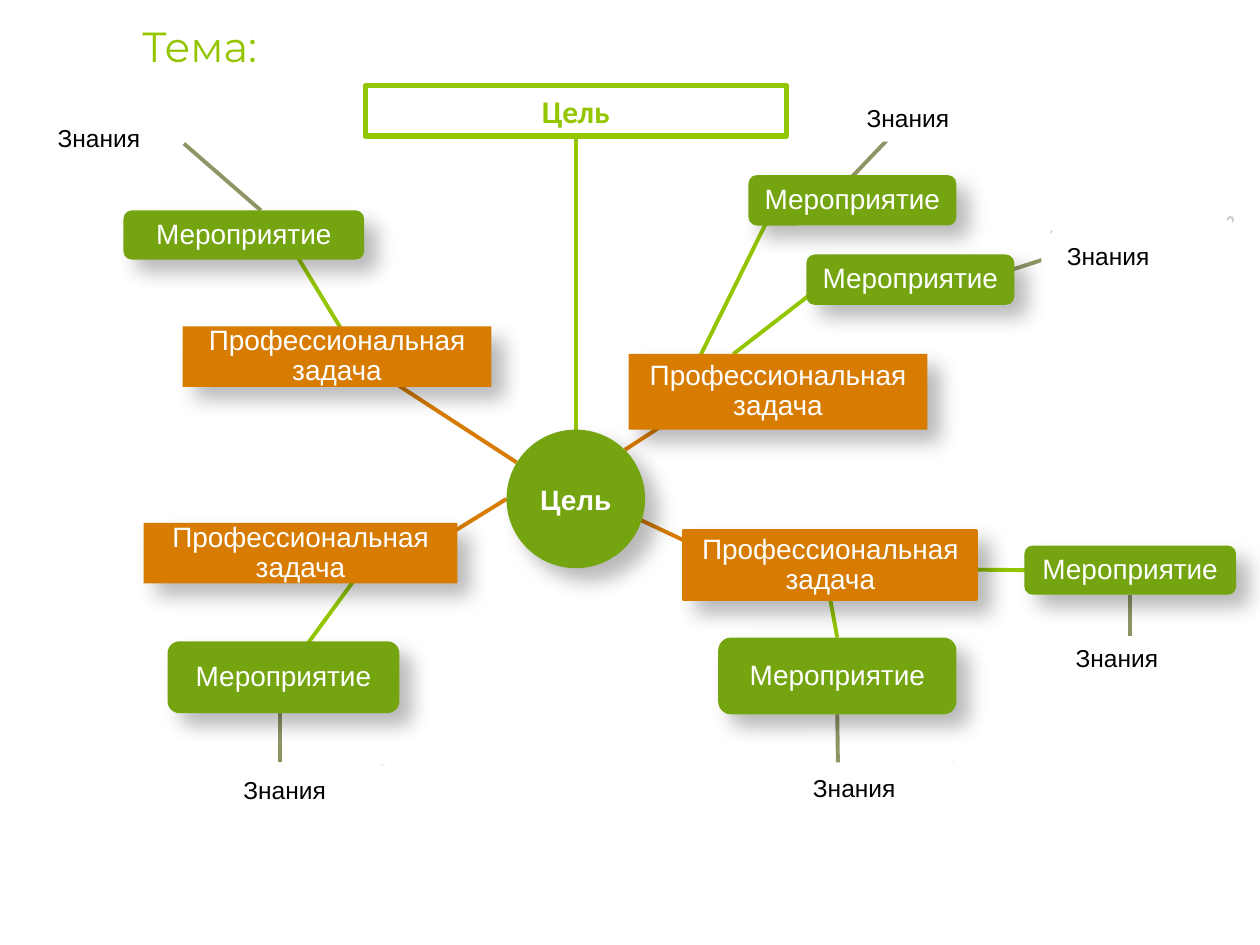
"""Build a goal map: a central goal, professional tasks, activities and knowledge."""
from lxml import etree
from pptx import Presentation
from pptx.dml.color import RGBColor
from pptx.enum.shapes import MSO_CONNECTOR, MSO_SHAPE
from pptx.enum.text import MSO_ANCHOR, MSO_AUTO_SIZE, PP_ALIGN
from pptx.oxml import parse_xml
from pptx.oxml.ns import nsdecls, qn
from pptx.util import Inches, Pt

RECT, ROUNDED = MSO_SHAPE.RECTANGLE, MSO_SHAPE.ROUNDED_RECTANGLE
OVAL, SCROLL = MSO_SHAPE.OVAL, MSO_SHAPE.HORIZONTAL_SCROLL
STRAIGHT = MSO_CONNECTOR.STRAIGHT
LEFT, CENTER = PP_ALIGN.LEFT, PP_ALIGN.CENTER
TOP, MIDDLE = MSO_ANCHOR.TOP, MSO_ANCHOR.MIDDLE
GROW = MSO_AUTO_SIZE.SHAPE_TO_FIT_TEXT
TOP_SITE, BOTTOM_SITE = 0, 2

WHITE = RGBColor(0xFF, 0xFF, 0xFF)
BLACK = RGBColor(0x00, 0x00, 0x00)
LIME = RGBColor(0x93, 0xC6, 0x00)
HEADING_LIME = RGBColor(0x94, 0xC6, 0x00)
GREEN = RGBColor(0x74, 0xA5, 0x10)
ORANGE = RGBColor(0xD7, 0x7C, 0x01)
OLIVE = RGBColor(0x90, 0x94, 0x65)

SHADOW = (
    f'<a:effectLst {nsdecls("a")}><a:outerShdw blurRad="{Pt(11.8)}" dist="{Pt(10)}" '
    'dir="2700000" algn="tl" rotWithShape="0"><a:srgbClr val="000000">'
    '<a:alpha val="28000"/></a:srgbClr></a:outerShdw></a:effectLst>'
)

TASKS = {
    "upper left": (1.45, 2.59, 2.45, 0.48),
    "lower left": (1.14, 4.15, 2.49, 0.48),
    "upper right": (4.99, 2.81, 2.37, 0.6),
}
LOWER_RIGHT_TASK = (5.43, 4.21, 2.32, 0.55)
ACTIVITIES = {
    "upper left": (0.98, 1.67, 1.91, 0.39),
    "far right": (8.13, 4.33, 1.68, 0.39),
    "lower left": (1.33, 5.09, 1.84, 0.57),
    "right": (6.4, 2.02, 1.65, 0.4),
    "upper right": (5.94, 1.39, 1.65, 0.4),
    "lower right": (5.7, 5.06, 1.89, 0.61),
}
KNOWLEDGE = [
    ((8.28, 1.7, 1.53, 0.71), LEFT, WHITE),
    ((6.73, 0.76, 1.55, 0.4), LEFT, WHITE),
    ((0.27, 0.76, 2.45, 0.71), LEFT, None),
    ((8.39, 5.05, 1.41, 0.39), LEFT, WHITE),
    ((5.94, 6.03, 1.65, 0.48), CENTER, WHITE),
    ((1.42, 6.05, 1.65, 0.48), CENTER, WHITE),
]
TASK_LINKS = [
    ((2.98, 2.94), (4.1, 3.67)),
    ((3.21, 4.46), (4.02, 3.96)),
    ((5.7, 3.09), (4.96, 3.57)),
    ((5.07, 4.12), (5.79, 4.46)),
]
ACTIVITY_LINKS = [
    ((2.72, 2.63), (2.18, 1.74)),
    ((6.48, 4.51), (8.7, 4.53)),
    ((2.91, 4.47), (2.36, 5.22)),
    ((6.44, 2.33), (5.82, 2.81)),
    ((6.08, 1.77), (5.55, 2.84)),
]
KNOWLEDGE_LINKS = [
    ((7.91, 2.18), (8.28, 2.06)),
    ((6.66, 1.51), (7.09, 1.06)),
    ((2.07, 1.67), (1.46, 1.14)),
    ((2.22, 5.66), (2.22, 6.05)),
]


def write(shape, text, size, color, font="Arial", align=CENTER, spacing=None,
          bold=False, anchor=MIDDLE):
    """Put one formatted paragraph into a shape and return the paragraph."""
    frame = shape.text_frame
    frame.word_wrap = True
    frame.vertical_anchor = anchor
    paragraph = frame.paragraphs[0]
    paragraph.alignment = align
    if spacing:
        paragraph.line_spacing = spacing
    run = paragraph.add_run()
    run.text = text
    run.font.size = Pt(size)
    run.font.name = font
    run.font.bold = bold
    run.font.color.rgb = color
    return paragraph


def add_outline(slide, kind, box, fill, line=None, width=2):
    """Add a preset shape without shadow, with optional fill and line."""
    shape = slide.shapes.add_shape(kind, *map(Inches, box))
    shape.shadow.inherit = False
    if fill is None:
        shape.fill.background()
    else:
        shape.fill.solid()
        shape.fill.fore_color.rgb = fill
    if line is None:
        shape.line.fill.background()
    else:
        shape.line.color.rgb = line
        shape.line.width = Pt(width)
    return shape


def add_node(slide, kind, box, fill, text, line=None, spacing=0.9, bold=False):
    """Add a filled map node with a soft shadow and white text."""
    node = add_outline(slide, kind, box, fill, line)
    properties = node._element.spPr
    properties.replace(properties.find(qn("a:effectLst")), parse_xml(SHADOW))
    write(node, text, 16, WHITE, spacing=spacing, bold=bold)
    return node


def add_link(slide, start, end, color, upper=None, lower=None):
    """Add a line behind the nodes, joined to the given upper and lower nodes."""
    link = slide.shapes.add_connector(STRAIGHT, *map(Inches, (*start, *end)))
    link.line.color.rgb = color
    link.line.width = Pt(2.25)
    etree.SubElement(link._element.spPr, qn("a:effectLst"))
    if upper is not None:
        link.begin_connect(upper, BOTTOM_SITE)
    if lower is not None:
        link.end_connect(lower, TOP_SITE)
    link._element.getparent().insert(2, link._element)


def add_heading(shape, text, size, font, align, bold=False):
    """Write a heading with a hanging indent into a shape that fits its text."""
    paragraph = write(shape, text, size, HEADING_LIME, font, align, bold=bold, anchor=TOP)
    shape.text_frame.auto_size = GROW
    properties = paragraph._p.get_or_add_pPr()
    properties.set("marL", str(Inches(0.38)))
    properties.set("indent", str(-Inches(0.38)))


def main():
    """Build and save the slide."""
    deck = Presentation()
    deck.slide_width, deck.slide_height = Inches(10), Inches(7.5)
    slide = deck.slides.add_slide(deck.slide_layouts[6])

    topic = slide.shapes.add_textbox(*map(Inches, (1.03, 0.11, 7.93, 0.51)))
    add_heading(topic, "Тема:", 24, "Montserrat", LEFT)
    goal_banner = add_outline(slide, RECT, (2.9, 0.68, 3.34, 0.4), WHITE, LIME, 3)
    add_heading(goal_banner, "Цель", 18, "Calibri", CENTER, bold=True)

    for box, align, paper in KNOWLEDGE:
        scroll = add_outline(slide, SCROLL, box, paper, paper)
        write(scroll, "Знания", 14, BLACK, align=align, spacing=0.8)

    goal = add_node(slide, OVAL, (4.02, 3.41, 1.1, 1.1), GREEN, "Цель",
                    spacing=None, bold=True)
    activities = {place: add_node(slide, ROUNDED, box, GREEN, "Мероприятие")
                  for place, box in ACTIVITIES.items()}
    task_text = "Профессиональная задача"
    for box in TASKS.values():
        add_node(slide, RECT, box, ORANGE, task_text)
    lower_right_task = add_node(slide, RECT, LOWER_RIGHT_TASK, ORANGE, task_text, ORANGE)

    for links, color in ((TASK_LINKS, ORANGE), (ACTIVITY_LINKS, LIME),
                         (KNOWLEDGE_LINKS, OLIVE)):
        for start, end in links:
            add_link(slide, start, end, color)
    add_link(slide, (4.57, 1.08), (4.57, 3.41), LIME, goal_banner, goal)
    add_link(slide, (6.59, 4.76), (6.65, 5.06), LIME,
             lower_right_task, activities["lower right"])
    add_link(slide, (6.65, 5.67), (6.65, 6.05), OLIVE, activities["lower right"])
    add_link(slide, (8.97, 4.72), (8.97, 5.05), OLIVE, activities["far right"])

    deck.save("out.pptx")


if __name__ == "__main__":
    main()
